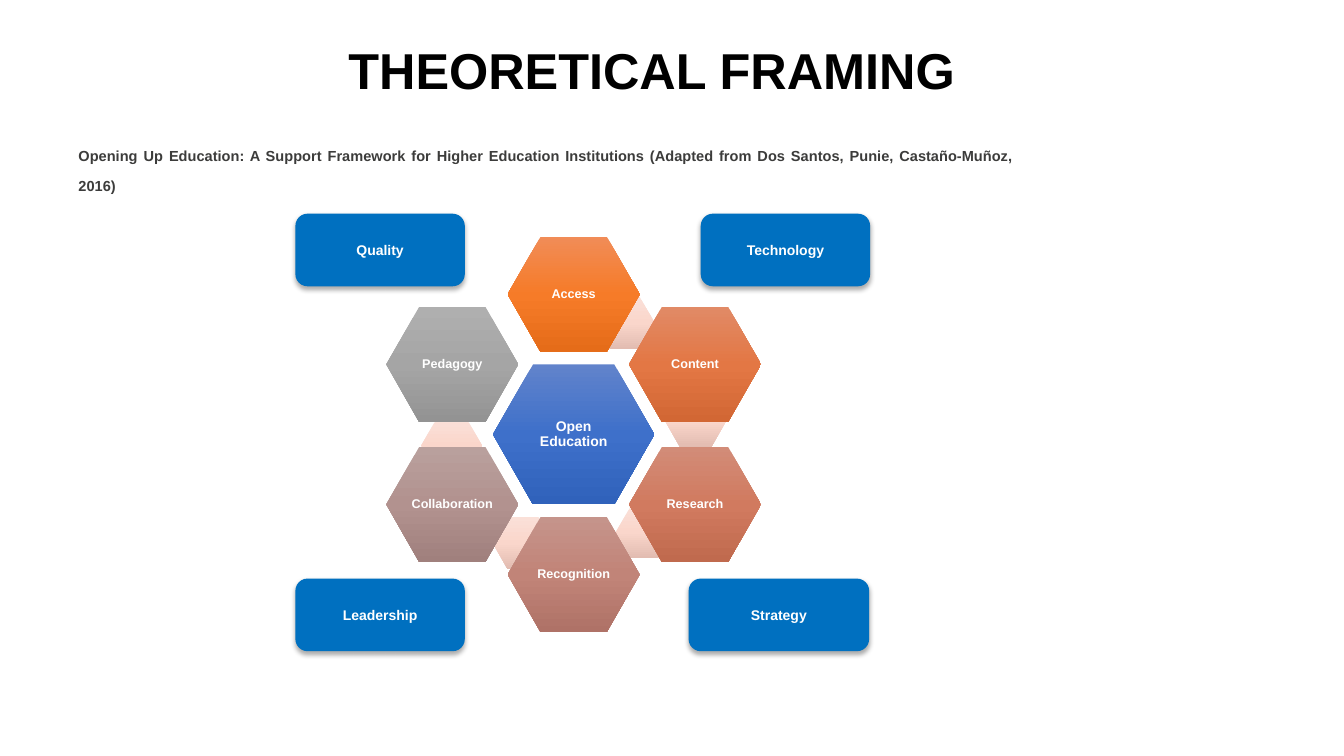
from lxml import etree
from pptx import Presentation
from pptx.dml.color import RGBColor
from pptx.enum.shapes import MSO_SHAPE
from pptx.enum.text import MSO_ANCHOR, PP_ALIGN
from pptx.oxml.ns import qn
from pptx.util import Inches, Pt
from math import cos, radians, sin

HEXAGON = MSO_SHAPE.HEXAGON
ROUNDED = MSO_SHAPE.FLOWCHART_ALTERNATE_PROCESS
MIDDLE, TOP = MSO_ANCHOR.MIDDLE, MSO_ANCHOR.TOP
CENTER, JUSTIFY = PP_ALIGN.CENTER, PP_ALIGN.JUSTIFY

TITLE = "THEORETICAL FRAMING"
SOURCE = ("Opening Up Education: A Support Framework for Higher Education "
          "Institutions (Adapted from Dos Santos, Punie, Castaño-Muñoz, 2016)")
CORE = ("Open Education", ("6183CB", "3E70CA", "3062BB"))
DIMENSIONS = [
    ("Access", ("F18C57", "F67B28", "E56C19")),
    ("Content", ("E18A66", "E37744", "D26734")),
    ("Research", ("D28C78", "D17A5F", "C06A4E")),
    ("Recognition", ("C5948B", "C18478", "AF7267")),
    ("Collaboration", ("B9A09D", "B2928F", "A0807D")),
    ("Pedagogy", ("AFAFAF", "A5A5A5", "939393")),
]
CORNERS = [
    ("Quality", 2.93, 2.12, 1.68),
    ("Leadership", 2.93, 5.74, 1.68),
    ("Strategy", 6.83, 5.74, 1.79),
    ("Technology", 6.95, 2.12, 1.68),
]
LINK_CENTERS = [(6.19, 3.2), (6.9, 4.18), (6.41, 5.28), (5.19, 5.39), (4.48, 4.42)]
LINK_STOPS = ("FAE0D8", "FAD6CB", "E2BCB1")
COLORS = {"title": "000000", "source": "3C3C3B", "corner": "0070C0",
          "label": "FFFFFF", "shadow": "000000"}
CORE_X, CORE_Y, RADIUS = 5.69, 4.31, 1.39
CORE_SIZE, NODE_SIZE, LINK_SIZE = (1.6, 1.39), (1.31, 1.14), (0.6, 0.52)


def write(shape, text, size, color, align=CENTER, anchor=MIDDLE):
    frame = shape.text_frame
    frame.word_wrap = True
    frame.vertical_anchor = anchor
    paragraph = frame.paragraphs[0]
    paragraph.alignment = align
    run = paragraph.add_run()
    run.text = text
    run.font.name = "Arial"
    run.font.size = Pt(size)
    run.font.bold = True
    run.font.color.rgb = RGBColor.from_string(COLORS[color])
    return run


def add_text(slide, left, top, width, height, *text_options):
    box = slide.shapes.add_textbox(Inches(left), Inches(top), Inches(width), Inches(height))
    return write(box, *text_options)


def add_plain_shape(slide, kind, left, top, width, height):
    shape = slide.shapes.add_shape(kind, Inches(left), Inches(top), Inches(width), Inches(height))
    shape.shadow.inherit = False
    shape.line.fill.background()
    return shape


def add_color(parent, color):
    return etree.SubElement(parent, qn("a:srgbClr"), val=color)


def add_corner(slide, label, left, top, width):
    shape = add_plain_shape(slide, ROUNDED, left, top, width, 0.72)
    shape.fill.solid()
    shape.fill.fore_color.rgb = RGBColor.from_string(COLORS["corner"])
    effects = shape._element.spPr.find(qn("a:effectLst"))
    shadow = etree.SubElement(effects, qn("a:outerShdw"), blurRad=str(Pt(3.5)),
                              dist=str(Pt(2.2)), dir="5400000", rotWithShape="0")
    etree.SubElement(add_color(shadow, COLORS["shadow"]), qn("a:alpha"), val="32000")
    write(shape, label, 10, "label")


def add_hexagon(slide, center_x, center_y, size, stops):
    width, height = size
    shape = add_plain_shape(slide, HEXAGON, center_x - width / 2, center_y - height / 2,
                            width, height)
    shape.adjustments[0] = 0.286
    shape.fill.gradient()
    shape.fill.gradient_angle = 270
    stop_list = shape._element.spPr.find(".//" + qn("a:gsLst"))
    stop_list.clear()
    for index, color in enumerate(stops):
        add_color(etree.SubElement(stop_list, qn("a:gs"), pos=str(index * 50000)), color)
    return shape


def add_labelled_hexagon(slide, center_x, center_y, size, stops, label, points):
    shape = add_hexagon(slide, center_x, center_y, size, stops)
    frame = shape.text_frame
    frame.margin_left = frame.margin_right = Inches(0.01)
    frame.margin_top = frame.margin_bottom = Inches(0.01)
    write(shape, label, points, "label")
    frame.paragraphs[0].line_spacing = 0.9


def main():
    """Build the theoretical framing slide."""
    presentation = Presentation()
    presentation.slide_width, presentation.slide_height = Inches(13.33), Inches(7.5)
    slide = presentation.slides.add_slide(presentation.slide_layouts[6])

    add_text(slide, 0.8, 0.28, 11.33, 0.81, TITLE, 36, "title")
    source = add_text(slide, 0.68, 1.38, 9.47, 0.57, SOURCE, 18, "source", JUSTIFY, TOP)
    source.font._element.set("baseline", "30000")

    for corner in CORNERS:
        add_corner(slide, *corner)
    for center_x, center_y in LINK_CENTERS:
        add_hexagon(slide, center_x, center_y, LINK_SIZE, LINK_STOPS)
    label, stops = CORE
    add_labelled_hexagon(slide, CORE_X, CORE_Y, CORE_SIZE, stops, label, 10)
    for index, (label, stops) in enumerate(DIMENSIONS):
        angle = radians(index * 360 / len(DIMENSIONS))
        add_labelled_hexagon(slide, CORE_X + RADIUS * sin(angle), CORE_Y - RADIUS * cos(angle),
                             NODE_SIZE, stops, label, 9)
    presentation.save("out.pptx")


if __name__ == "__main__":
    main()
